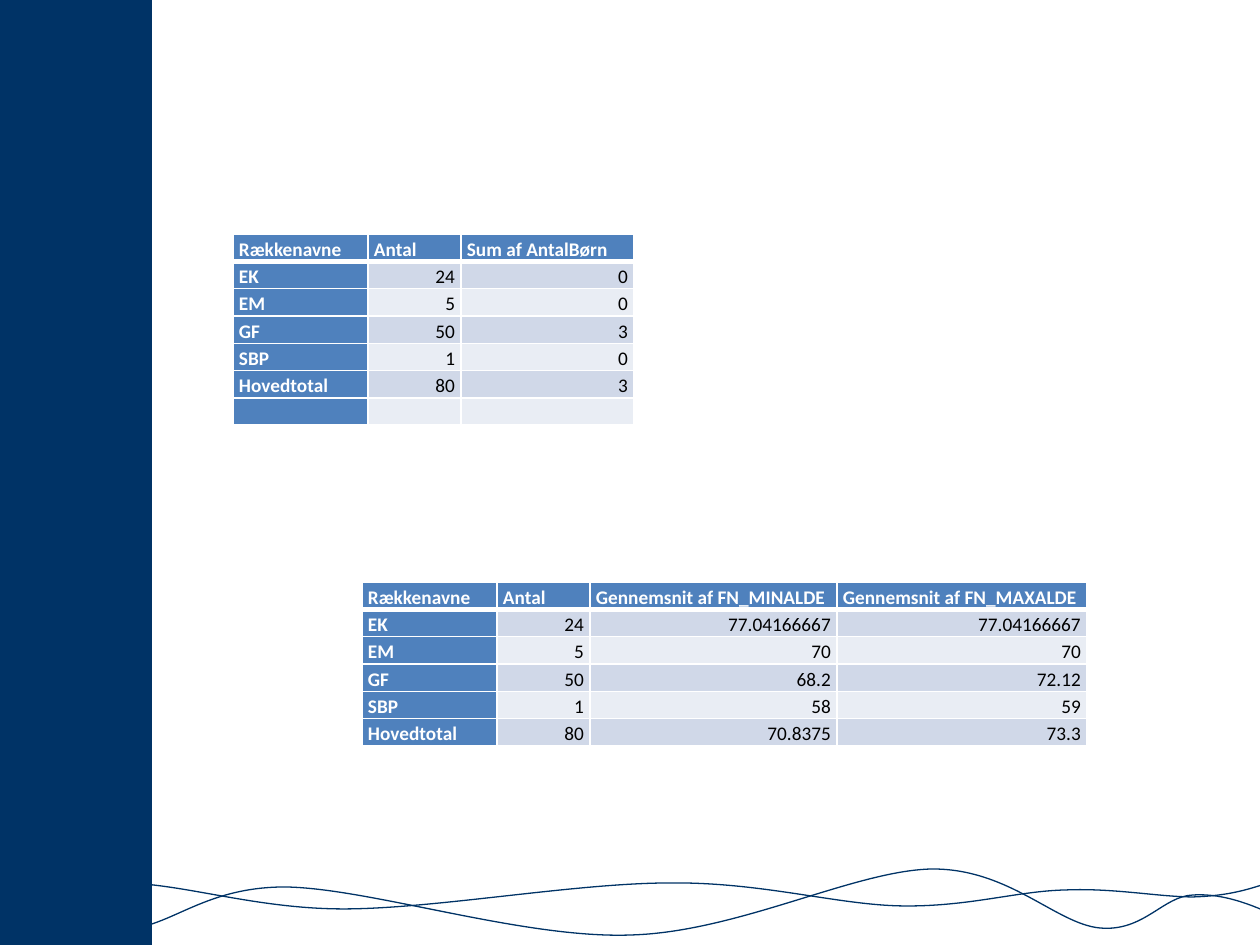
from dataclasses import dataclass

from lxml.etree import SubElement
from pptx import Presentation
from pptx.dml.color import RGBColor
from pptx.enum.shapes import MSO_SHAPE as Shape
from pptx.enum.text import MSO_ANCHOR as Anchor, PP_ALIGN as Align
from pptx.oxml.ns import qn
from pptx.util import Emu, Pt

PX = 914400 / 126


@dataclass(frozen=True)
class Theme:
    navy: str = "003366"
    header: str = "4F81BD"
    bands: tuple = ("D0D8E8", "E9EDF4")
    white: str = "FFFFFF"
    black: str = "000000"
    font: str = "Calibri"
    size: int = 11
    wave_line: float = 0.75
    thin_border: int = 1
    thick_border: int = 3


def px(length):
    return Emu(round(length * PX))


def color(value):
    return RGBColor.from_string(value)


class SlideBuilder:
    def __init__(self, page, theme):
        self.page = page
        self.theme = theme

    def bar(self, left, top, width, height):
        shape = self.page.shapes.add_shape(
            Shape.RECTANGLE, px(left), px(top), px(width), px(height))
        shape.shadow.inherit = False
        shape.fill.solid()
        shape.fill.fore_color.rgb = color(self.theme.navy)
        shape.line.fill.background()

    def wave(self, start, curves):
        """Draw joined curves, each given as two control points and an end."""
        builder = self.page.shapes.build_freeform(*start, scale=PX)
        builder.add_line_segments(
            [point for curve in curves for point in curve], close=False)
        shape = builder.convert_to_shape()
        outline = next(shape._element.iter(qn("a:path")))
        lines = outline.findall(qn("a:lnTo"))
        for first in range(0, len(lines), 3):
            curve = SubElement(outline, qn("a:cubicBezTo"))
            for line in lines[first:first + 3]:
                curve.append(line[0])
                outline.remove(line)
        shape.shadow.inherit = False
        shape.fill.background()
        shape.line.color.rgb = color(self.theme.navy)
        shape.line.width = Pt(self.theme.wave_line)

    def table(self, left, top, widths, row_height, rows):
        frame = self.page.shapes.add_table(
            len(rows), len(widths), px(left), px(top),
            px(sum(widths)), px(row_height * len(rows)))
        table = frame.table
        table.horz_banding = False
        for column, width in zip(table.columns, widths):
            column.width = px(width)
        for r, values in enumerate(rows):
            table.rows[r].height = px(row_height)
            for c, value in enumerate(values):
                self.cell(table.cell(r, c), r, c, value)

    def cell(self, cell, row, column, value):
        theme = self.theme
        heading = row == 0 or column == 0
        self.borders(cell, row)
        cell.fill.solid()
        cell.fill.fore_color.rgb = color(
            theme.header if heading else theme.bands[(row - 1) % 2])
        cell.margin_left = cell.margin_right = px(6)
        cell.margin_top = cell.margin_bottom = 0
        cell.vertical_anchor = Anchor.BOTTOM
        para = cell.text_frame.paragraphs[0]
        if not value:
            SubElement(para._p, qn("a:endParaRPr"), sz=str(theme.size * 100))
            return
        para.alignment = Align.LEFT if heading else Align.RIGHT
        para.line_spacing = 1.15
        span = para.add_run()
        span.text = value
        span.font.name = theme.font
        span.font.size = Pt(theme.size)
        span.font.bold = heading
        span.font.color.rgb = color(theme.white if heading else theme.black)

    def borders(self, cell, row):
        """Draw white borders, thick between the header and the first row."""
        theme = self.theme
        thick_side = {0: "lnB", 1: "lnT"}.get(row)
        properties = cell._tc.get_or_add_tcPr()
        for side in ("lnL", "lnR", "lnT", "lnB"):
            points = theme.thick_border if side == thick_side else theme.thin_border
            line = SubElement(properties, qn(f"a:{side}"), w=str(Pt(points)))
            fill = SubElement(line, qn("a:solidFill"))
            SubElement(fill, qn("a:srgbClr"), val=theme.white)


FLAT_WAVE = (
    ((1247, 890), (1227, 896), (1193, 897)),
    ((1159, 897), (1114, 888), (1066, 890)),
    ((1017, 891), (969, 907), (902, 906)),
    ((837, 905), (762, 882), (670, 883)),
    ((577, 883), (440, 908), (349, 909)),
    ((257, 910), (183, 883), (121, 883)),
    ((59, 883), (-23, 907), (-23, 907)),
)
HIGH_WAVE = (
    ((1255, 906), (1225, 893), (1193, 895)),
    ((1163, 896), (1144, 932), (1100, 928)),
    ((1056, 924), (1009, 868), (931, 869)),
    ((853, 871), (738, 932), (631, 935)),
    ((523, 939), (370, 888), (285, 887)),
    ((200, 887), (168, 931), (120, 929)),
    ((71, 926), (-5, 876), (-5, 876)),
)
CHILDREN = (
    ("Rækkenavne", "Antal", "Sum af AntalBørn"),
    ("EK", "24", "0"),
    ("EM", "5", "0"),
    ("GF", "50", "3"),
    ("SBP", "1", "0"),
    ("Hovedtotal", "80", "3"),
    ("", "", ""),
)
AGES = (
    ("Rækkenavne", "Antal", "Gennemsnit af FN_MINALDE", "Gennemsnit af FN_MAXALDE"),
    ("EK", "24", "77.04166667", "77.04166667"),
    ("EM", "5", "70", "70"),
    ("GF", "50", "68.2", "72.12"),
    ("SBP", "1", "58", "59"),
    ("Hovedtotal", "80", "70.8375", "73.3"),
)


def main():
    deck = Presentation()
    deck.slide_width, deck.slide_height = px(1260), px(945)
    page = deck.slides.add_slide(deck.slide_layouts[6])
    builder = SlideBuilder(page, Theme())
    builder.wave((1268, 883), FLAT_WAVE)
    builder.wave((1285, 920), HIGH_WAVE)
    builder.bar(-37, -30, 189, 999)
    builder.table(233, 234, (135, 93, 173), 27, CHILDREN)
    builder.table(362, 582, (135, 93, 247, 250), 27, AGES)
    deck.save("out.pptx")


if __name__ == "__main__":
    main()
